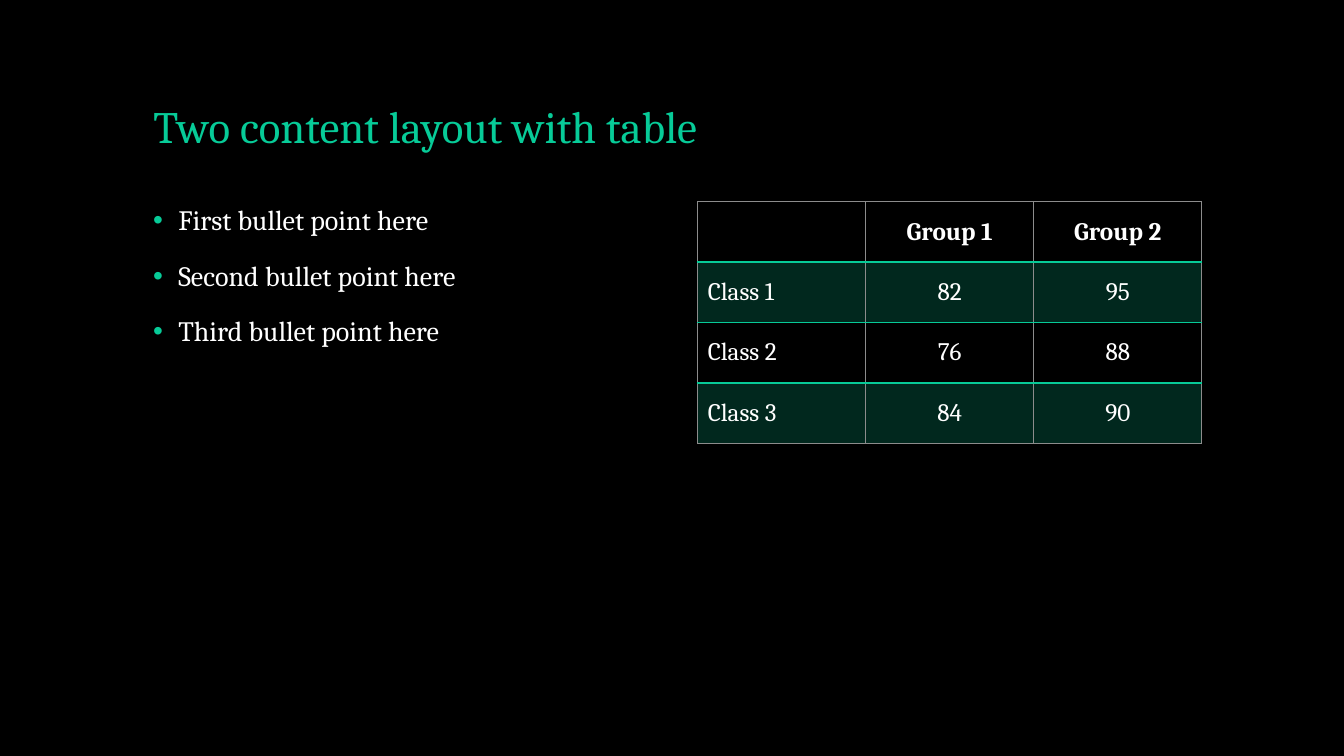
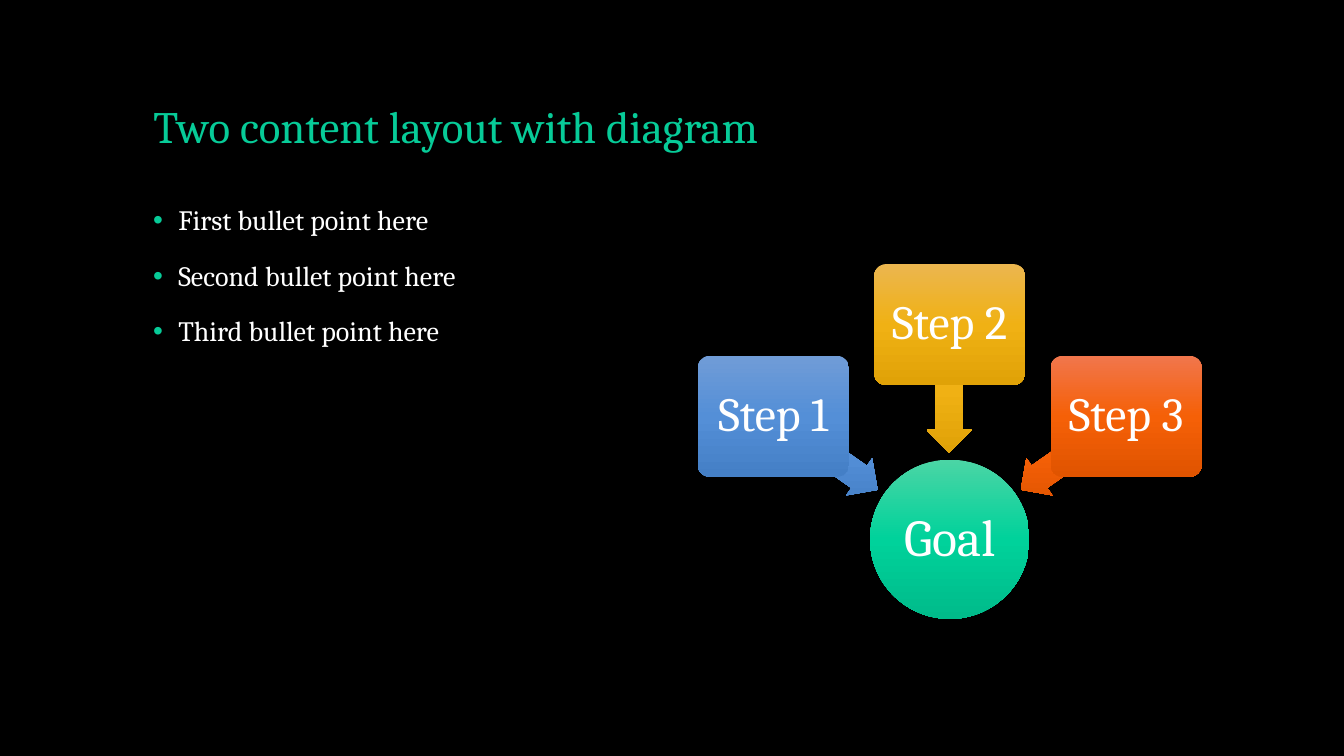
import copy

import pptx
import pptx.dml.color
import pptx.enum.shapes
import pptx.enum.text
import pptx.oxml
import pptx.oxml.ns
import pptx.util

Inches = pptx.util.Inches
Pt = pptx.util.Pt
RGBColor = pptx.dml.color.RGBColor
MSO_SHAPE = pptx.enum.shapes.MSO_SHAPE
PP_ALIGN = pptx.enum.text.PP_ALIGN
MSO_ANCHOR = pptx.enum.text.MSO_ANCHOR
qn = pptx.oxml.ns.qn
NS = pptx.oxml.ns.nsdecls("a")

FONT = "Cambria"
BLACK = RGBColor(0x00, 0x00, 0x00)
WHITE = RGBColor(0xFF, 0xFF, 0xFF)
GREEN = RGBColor(0x07, 0xCB, 0x98)
GREY = RGBColor(0x8C, 0x8C, 0x8C)
GOAL_SHADES = [RGBColor(0x4B, 0xD5, 0xA5), RGBColor(0x00, 0xD2, 0x9B), RGBColor(0x00, 0xBB, 0x8A)]
BLUE_SHADES = [RGBColor(0x70, 0x9C, 0xD7), RGBColor(0x54, 0x8F, 0xD7), RGBColor(0x44, 0x7F, 0xC6)]
GOLD_SHADES = [RGBColor(0xEB, 0xB6, 0x4F), RGBColor(0xF0, 0xB1, 0x14), RGBColor(0xE0, 0xA2, 0x07)]
ORANGE_SHADES = [RGBColor(0xF1, 0x76, 0x4C), RGBColor(0xF5, 0x60, 0x07), RGBColor(0xE0, 0x54, 0x00)]

BULLETS = ["First bullet point here", "Second bullet point here", "Third bullet point here"]

prs = pptx.Presentation()
prs.slide_width = Inches(13.33)
prs.slide_height = Inches(7.5)
prs.slide_master.background.fill.solid()
prs.slide_master.background.fill.fore_color.rgb = BLACK


def add_content_slide(heading):
    """Add a slide with its title and the bullet list in the left half."""
    slide = prs.slides.add_slide(prs.slide_layouts[5])
    title = slide.shapes.title
    title.left, title.top = Inches(1.42), Inches(0.4)
    title.width, title.height = Inches(10.5), Inches(1.17)
    title.text_frame.text = heading
    title.text_frame.vertical_anchor = MSO_ANCHOR.BOTTOM
    title.text_frame.auto_size = pptx.enum.text.MSO_AUTO_SIZE.NONE
    line = title.text_frame.paragraphs[0]
    line.alignment = PP_ALIGN.LEFT
    line.line_spacing = 0.9
    line.font.name, line.font.size, line.font.color.rgb = FONT, Pt(32), GREEN

    points = slide.shapes.add_textbox(Inches(1.42), Inches(2), Inches(5), Inches(4.76)).text_frame
    points.word_wrap = True
    points.text = "\n".join(BULLETS)
    for point in points.paragraphs:
        point.line_spacing = 0.9
        point.space_before = Pt(18)
        point.font.name, point.font.size, point.font.color.rgb = FONT, Pt(20), WHITE
        props = point._p.get_or_add_pPr()
        props.set("marL", str(Inches(0.25)))
        props.set("indent", str(-Inches(0.25)))
        bullet_parts = [
            f'<a:buClr {NS}><a:srgbClr val="{GREEN}"/></a:buClr>',
            f'<a:buFont {NS} typeface="Arial"/>',
            f'<a:buChar {NS} char="•"/>',
        ]
        # Bullet settings belong after the spacing and before the default run style.
        for part in bullet_parts:
            props.find(qn("a:defRPr")).addprevious(pptx.oxml.parse_xml(part))
    return slide


def add_gradient_shape(slide, kind, left, top, width, height, shades, label="", size=34, inset=0.07):
    shape = slide.shapes.add_shape(kind, Inches(left), Inches(top), Inches(width), Inches(height))
    shape.shadow.inherit = False
    shape.line.fill.background()
    shape.fill.gradient()
    shape.fill.gradient_angle = 270
    gradient = shape._element.spPr.find(qn("a:gradFill"))
    gradient.set("rotWithShape", "0")
    stops = gradient.find(qn("a:gsLst"))
    stops.insert(1, copy.deepcopy(stops[0]))
    for stop, shade, position in zip(shape.fill.gradient_stops, shades, (0, 0.5, 1)):
        stop.color.rgb = shade
        stop.position = position
    if label:
        frame = shape.text_frame
        frame.text = label
        frame.word_wrap = True
        frame.vertical_anchor = MSO_ANCHOR.MIDDLE
        frame.margin_left = frame.margin_right = Inches(inset)
        frame.margin_top = frame.margin_bottom = Inches(inset)
        line = frame.paragraphs[0]
        line.alignment = PP_ALIGN.CENTER
        line.line_spacing = 0.9
        line.font.name, line.font.size, line.font.color.rgb = FONT, Pt(size), WHITE
    return shape


# Slide 1: class results
results_slide = add_content_slide("Two content layout with table")
RESULTS = [
    ["", "Group 1", "Group 2"],
    ["Class 1", "82", "95"],
    ["Class 2", "76", "88"],
    ["Class 3", "84", "90"],
]
results = results_slide.shapes.add_table(
    len(RESULTS), 3, Inches(6.92), Inches(2), Inches(5), Inches(2.4)
).table
for row, values in enumerate(RESULTS):
    for col, value in enumerate(values):
        cell = results.cell(row, col)
        cell.text = value
        cell.vertical_anchor = MSO_ANCHOR.MIDDLE
        entry = cell.text_frame.paragraphs[0]
        header = row == 0
        entry.alignment = PP_ALIGN.CENTER if header or col else PP_ALIGN.LEFT
        entry.font.name, entry.font.size, entry.font.color.rgb = FONT, Pt(18), WHITE
        entry.font.bold = header
        cell_props = cell._tc.get_or_add_tcPr()
        if row % 2:
            cell.fill.solid()
            cell.fill.fore_color.rgb = GREEN
            tint = cell_props.find(".//" + qn("a:srgbClr"))
            tint.append(pptx.oxml.parse_xml(f'<a:alpha {NS} val="20000"/>'))
        else:
            cell.fill.background()
        edges = {
            "lnL": GREY,
            "lnR": GREY,
            "lnT": GREY if header else GREEN,
            "lnB": GREY if row == len(RESULTS) - 1 else GREEN,
        }
        for order, (edge, color) in enumerate(edges.items()):
            cell_props.insert(order, pptx.oxml.parse_xml(
                f'<a:{edge} {NS} w="{Pt(1)}"><a:solidFill><a:srgbClr val="{color}"/>'
                f'</a:solidFill></a:{edge}>'
            ))

# Slide 2: three steps towards a goal
steps_slide = add_content_slide("Two content layout with diagram")
add_gradient_shape(steps_slide, MSO_SHAPE.OVAL, 8.63, 4.56, 1.58, 1.58, GOAL_SHADES, "Goal", 37, 0.03)
STEPS = [
    ("Step 1", BLUE_SHADES, 3.53, 4.27, 215),
    ("Step 2", GOLD_SHADES, 2.62, 3.63, 270),
    ("Step 3", ORANGE_SHADES, 3.53, 4.27, 325),
]
for index, (label, shades, box_top, arrow_top, rotation) in enumerate(STEPS):
    arrow = add_gradient_shape(
        steps_slide, MSO_SHAPE.LEFT_ARROW, 7.55 + 1.23 * index, arrow_top, 1.27, 0.45, shades
    )
    arrow.adjustments[0], arrow.adjustments[1] = 0.6, 0.5
    arrow.rotation = rotation
    box = add_gradient_shape(
        steps_slide, MSO_SHAPE.ROUNDED_RECTANGLE, 6.92 + 1.75 * index, box_top, 1.5, 1.2, shades, label
    )
    box.adjustments[0] = 0.1

prs.save("out.pptx")
